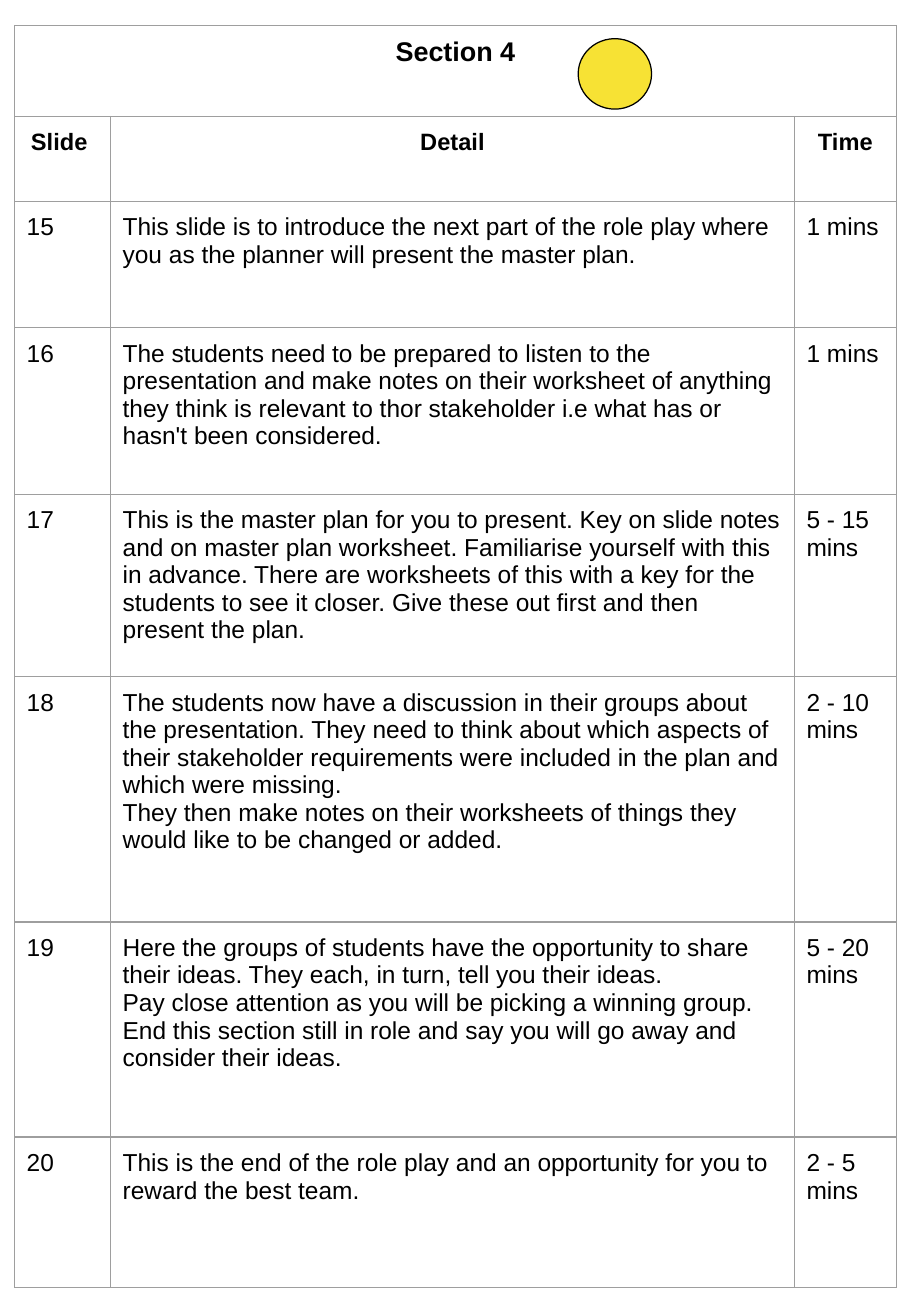
from dataclasses import dataclass

from lxml import etree
from pptx import Presentation
from pptx.dml.color import RGBColor
from pptx.enum.shapes import MSO_SHAPE
from pptx.enum.text import PP_ALIGN
from pptx.oxml.ns import qn
from pptx.slide import Slide
from pptx.table import Table, _Cell
from pptx.util import Pt

CENTER = PP_ALIGN.CENTER
LEFT = PP_ALIGN.LEFT
OVAL = MSO_SHAPE.OVAL

FONT = "Arial"
BLACK = "000000"
GREY = "9E9E9E"
YELLOW = "F7E234"
LINE_WIDTH = 0.75
CELL_MARGIN = 7.2
COLUMN_WIDTHS = (56.88, 405.36, 60.48)


@dataclass(frozen=True)
class TextStyle:
    size: float
    bold: bool
    align: PP_ALIGN


@dataclass(frozen=True)
class PlanRow:
    height: float
    texts: tuple[str, ...]
    style: TextStyle


SECTION = TextStyle(16, True, CENTER)
HEADING = TextStyle(14, True, CENTER)
BODY = TextStyle(14.5, False, LEFT)

PLAN_ROWS = (
    PlanRow(54, ("Section 4",), SECTION),
    PlanRow(50.4, ("Slide ", "Detail", "Time"), HEADING),
    PlanRow(74.88, (
        "15",
        "This slide is to introduce the next part of the role play where you as "
        "the planner will present the master plan.",
        "1 mins",
    ), BODY),
    PlanRow(98.64, (
        "16",
        "The students need to be prepared to listen to the presentation and make "
        "notes on their worksheet of anything they think is relevant to thor "
        "stakeholder i.e what has or hasn't been considered.",
        "1 mins",
    ), BODY),
    PlanRow(108, (
        "17",
        "This is the master plan for you to present. Key on slide notes and on "
        "master plan worksheet. Familiarise yourself with this in advance. There "
        "are worksheets of this with a key for the students to see it closer. "
        "Give these out first and then present the plan.",
        "5 - 15 mins",
    ), BODY),
    PlanRow(145.44, (
        "18",
        "The students now have a discussion in their groups about the "
        "presentation. They need to think about which aspects of their "
        "stakeholder requirements were included in the plan and which were "
        "missing.\n"
        "They then make notes on their worksheets of things they would like to "
        "be changed or added.",
        "2 - 10 mins",
    ), BODY),
    PlanRow(127.44, (
        "19",
        "Here the groups of students have the opportunity to share their ideas. "
        "They each, in turn, tell you their ideas.\n"
        "Pay close attention as you will be picking a winning group.\n"
        "End this section still in role and say you will go away and consider "
        "their ideas.",
        "5 - 20 mins",
    ), BODY),
    PlanRow(89.28, (
        "20",
        "This is the end of the role play and an opportunity for you to reward "
        "the best team.",
        "2 - 5 mins",
    ), BODY),
)


def color(hex_code: str) -> RGBColor:
    return RGBColor.from_string(hex_code)


def format_cell(cell: _Cell) -> None:
    cell.margin_left = cell.margin_right = Pt(CELL_MARGIN)
    cell.margin_top = cell.margin_bottom = Pt(CELL_MARGIN)
    properties = cell._tc.get_or_add_tcPr()
    for side in ("a:lnL", "a:lnR", "a:lnT", "a:lnB"):
        border = etree.SubElement(properties, qn(side), w=str(Pt(LINE_WIDTH)))
        fill = etree.SubElement(border, qn("a:solidFill"))
        etree.SubElement(fill, qn("a:srgbClr"), val=GREY)
    cell.fill.background()


def write_cell(cell: _Cell, text: str, style: TextStyle) -> None:
    cell.text_frame.text = text
    for paragraph in cell.text_frame.paragraphs:
        paragraph.alignment = style.align
        for run in paragraph.runs:
            run.font.name = FONT
            run.font.size = Pt(style.size)
            run.font.bold = style.bold
            run.font.color.rgb = color(BLACK)


def fill_row(plan: Table, index: int, plan_row: PlanRow) -> None:
    plan.rows[index].height = Pt(plan_row.height)
    for column in range(len(COLUMN_WIDTHS)):
        format_cell(plan.cell(index, column))
    for column, text in enumerate(plan_row.texts):
        write_cell(plan.cell(index, column), text, plan_row.style)


def add_lesson_plan(slide: Slide) -> None:
    plan = slide.shapes.add_table(
        len(PLAN_ROWS), len(COLUMN_WIDTHS), Pt(8.64), Pt(15),
        Pt(sum(COLUMN_WIDTHS)), Pt(sum(row.height for row in PLAN_ROWS)),
    ).table
    plan.first_row = False
    plan.horz_banding = False
    for column, width in zip(plan.columns, COLUMN_WIDTHS):
        column.width = Pt(width)
    for index, plan_row in enumerate(PLAN_ROWS):
        fill_row(plan, index, plan_row)
    plan.cell(0, 0).merge(plan.cell(0, len(COLUMN_WIDTHS) - 1))


def add_section_marker(slide: Slide) -> None:
    marker = slide.shapes.add_shape(OVAL, Pt(342.72), Pt(22.9), Pt(43.5), Pt(41.76))
    marker.shadow.inherit = False
    marker.fill.solid()
    marker.fill.fore_color.rgb = color(YELLOW)
    marker.line.color.rgb = color(BLACK)
    marker.line.width = Pt(LINE_WIDTH)


def main() -> None:
    presentation = Presentation()
    presentation.slide_width = Pt(540)
    presentation.slide_height = Pt(779.76)
    slide = presentation.slides.add_slide(presentation.slide_layouts[6])
    add_lesson_plan(slide)
    add_section_marker(slide)
    presentation.save("out.pptx")


if __name__ == "__main__":
    main()
